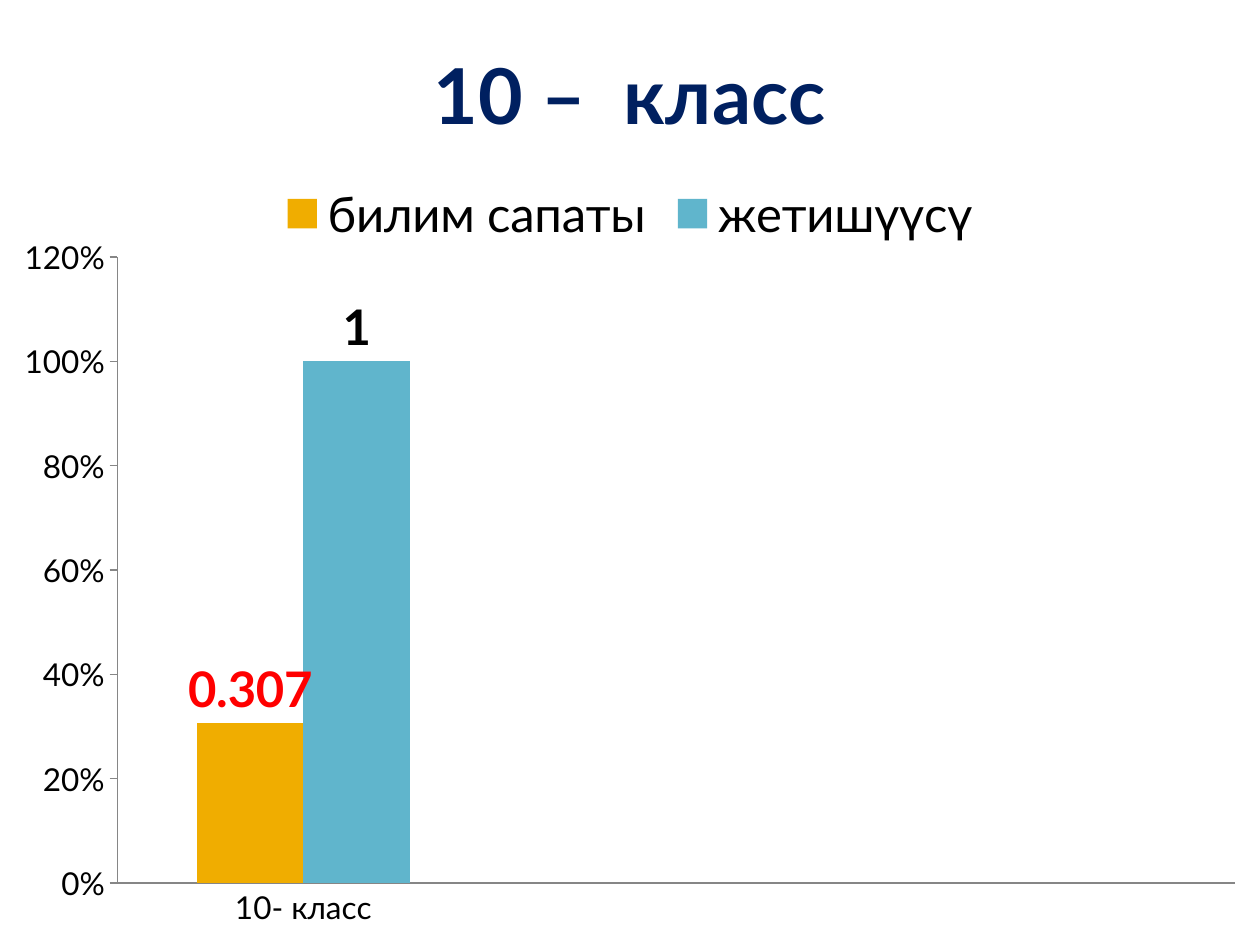
from dataclasses import dataclass

from lxml import etree
from pptx import Presentation
from pptx.chart.axis import CategoryAxis, ValueAxis
from pptx.chart.chart import Chart
from pptx.chart.data import CategoryChartData
from pptx.chart.series import BarSeries
from pptx.dml.color import RGBColor
from pptx.enum.chart import (
    XL_CHART_TYPE,
    XL_LABEL_POSITION,
    XL_LEGEND_POSITION,
    XL_TICK_MARK,
)
from pptx.oxml.ns import qn
from pptx.text.text import Font
from pptx.util import Inches, Pt

COLUMN_CLUSTERED = XL_CHART_TYPE.COLUMN_CLUSTERED
OUTSIDE_END = XL_LABEL_POSITION.OUTSIDE_END
LEGEND_TOP = XL_LEGEND_POSITION.TOP
TICK_NONE = XL_TICK_MARK.NONE
TICK_OUTSIDE = XL_TICK_MARK.OUTSIDE

FONT_NAME = "Lato"
BLACK = "000000"
NAVY = "002060"
AXIS_GRAY = "868686"
BLANK_LAYOUT = 6
SLIDE_WIDTH = Inches(10)
SLIDE_HEIGHT = Inches(7.5)
PLOT_LEFT, PLOT_TOP = Inches(0.93), Inches(2.04)
PLOT_WIDTH, PLOT_HEIGHT = Inches(8.87), Inches(4.97)


@dataclass(frozen=True)
class Measure:
    name: str
    values: tuple[float | None, ...]
    fill: str
    label_color: str


CATEGORIES = ("10- класс", "", "")
MEASURES = (
    Measure("билим сапаты", (0.307, None, None), "F0AD00", "FF0000"),
    Measure("жетишүүсү", (1, None, None), "60B5CC", BLACK),
)


def color(value: str) -> RGBColor:
    return RGBColor.from_string(value)


def format_font(font: Font, size: float, font_color: str, bold: bool = False) -> None:
    font.name = FONT_NAME
    font.size = Pt(size)
    font.bold = bold
    font.color.rgb = color(font_color)


def format_title(chart: Chart, text: str) -> None:
    chart.has_title = True
    chart.chart_title.include_in_layout = False
    run = chart.chart_title.text_frame.paragraphs[0].add_run()
    run.text = text
    format_font(run.font, 44, NAVY, bold=True)


def format_legend(chart: Chart) -> None:
    chart.has_legend = True
    chart.legend.position = LEGEND_TOP
    chart.legend.include_in_layout = False
    format_font(chart.legend.font, 28, BLACK)


def format_axis(axis: CategoryAxis | ValueAxis, tick_mark: int) -> None:
    axis.has_major_gridlines = False
    axis.major_tick_mark = tick_mark
    axis.minor_tick_mark = TICK_NONE
    axis.format.line.color.rgb = color(AXIS_GRAY)
    axis.format.line.width = Pt(0.75)
    format_font(axis.tick_labels.font, 18, BLACK)


def format_series(series: BarSeries, measure: Measure) -> None:
    series.invert_if_negative = False
    series.format.fill.solid()
    series.format.fill.fore_color.rgb = color(measure.fill)
    labels = series.data_labels
    labels.show_value = True
    labels.position = OUTSIDE_END
    labels.number_format = "General"
    labels.number_format_is_linked = False
    format_font(labels.font, 28, measure.label_color, bold=True)


def place_plot(chart: Chart) -> None:
    """Fix the area inside the axes as fractions of the chart."""
    plot_area = chart.element.find(f".//{qn('c:plotArea')}")
    for old_layout in plot_area.findall(qn("c:layout")):
        plot_area.remove(old_layout)
    layout = etree.Element(qn("c:layout"))
    plot_area.insert(0, layout)
    manual = etree.SubElement(layout, qn("c:manualLayout"))
    settings = {
        "layoutTarget": "inner",
        "xMode": "edge",
        "yMode": "edge",
        "x": PLOT_LEFT / SLIDE_WIDTH,
        "y": PLOT_TOP / SLIDE_HEIGHT,
        "w": PLOT_WIDTH / SLIDE_WIDTH,
        "h": PLOT_HEIGHT / SLIDE_HEIGHT,
    }
    for name, value in settings.items():
        etree.SubElement(manual, qn(f"c:{name}"), val=str(value))


def main() -> None:
    presentation = Presentation()
    presentation.slide_width = SLIDE_WIDTH
    presentation.slide_height = SLIDE_HEIGHT
    slide = presentation.slides.add_slide(presentation.slide_layouts[BLANK_LAYOUT])

    chart_data = CategoryChartData()
    chart_data.categories = CATEGORIES
    for measure in MEASURES:
        chart_data.add_series(measure.name, measure.values)
    chart = slide.shapes.add_chart(
        COLUMN_CLUSTERED, 0, 0, SLIDE_WIDTH, SLIDE_HEIGHT, chart_data
    ).chart

    format_font(chart.font, 18, BLACK)
    format_title(chart, "10 –  класс")
    format_legend(chart)
    format_axis(chart.category_axis, TICK_NONE)
    format_axis(chart.value_axis, TICK_OUTSIDE)
    chart.value_axis.minimum_scale = 0
    chart.value_axis.maximum_scale = 1.2
    chart.value_axis.major_unit = 0.2
    chart.value_axis.tick_labels.number_format = "0%"
    chart.value_axis.tick_labels.number_format_is_linked = False

    plot = chart.plots[0]
    plot.gap_width = 150
    plot.vary_by_categories = False
    for series, measure in zip(plot.series, MEASURES):
        format_series(series, measure)
    place_plot(chart)

    presentation.save("out.pptx")


if __name__ == "__main__":
    main()
